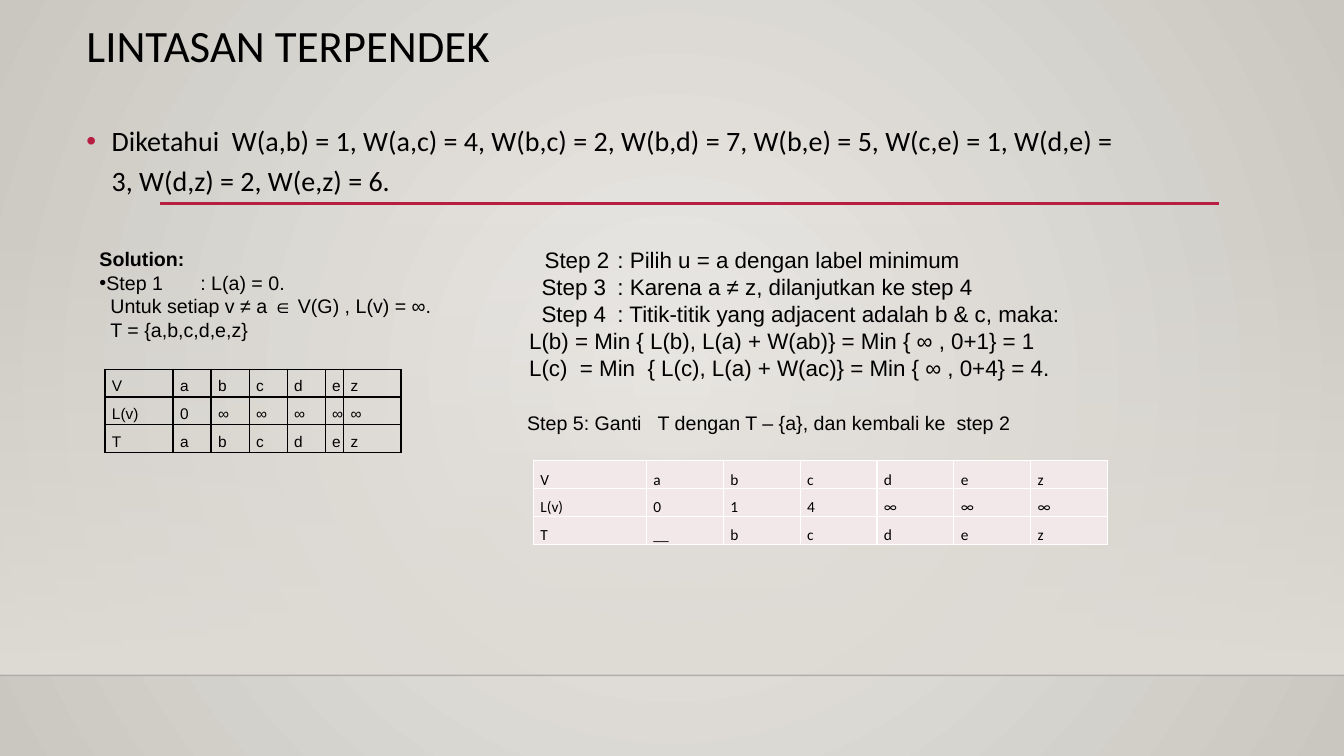
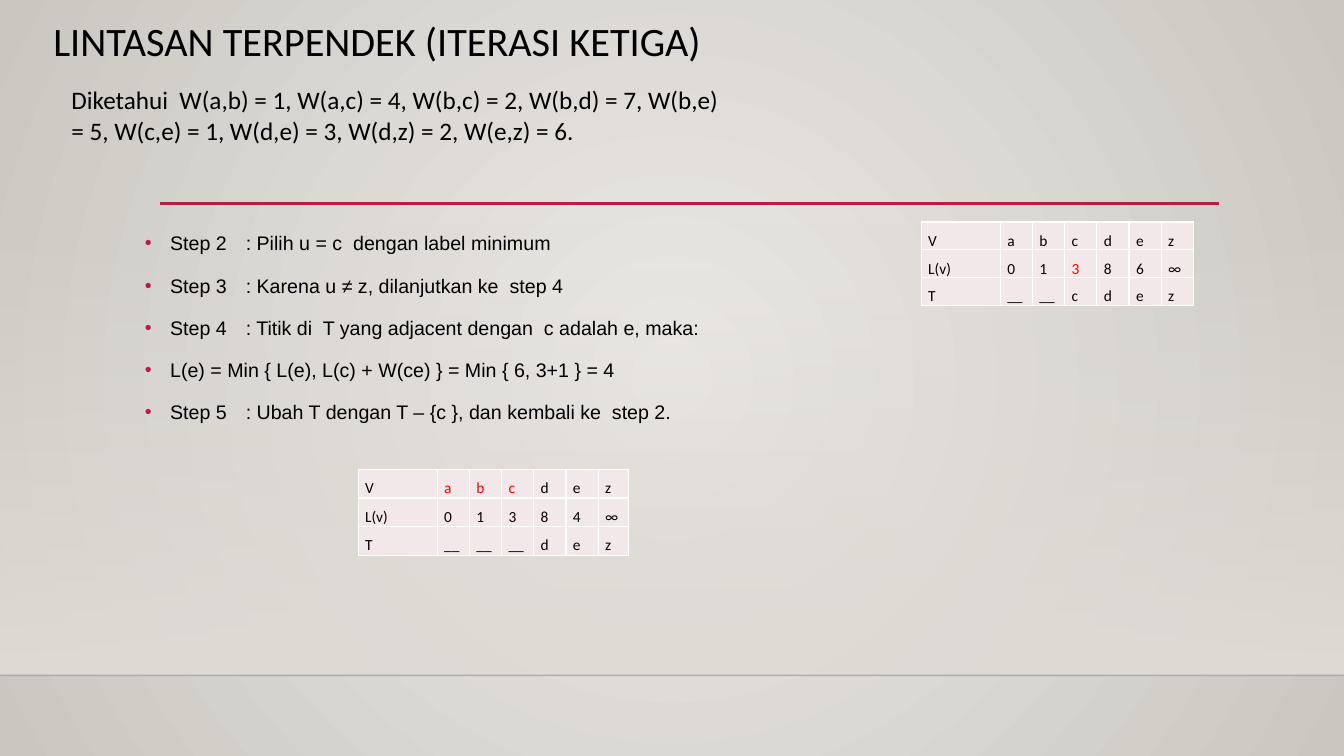
"""Build two slides on finding a shortest path step by step."""
from lxml.etree import SubElement
from pptx import Presentation
from pptx.dml.color import RGBColor
from pptx.enum.shapes import MSO_CONNECTOR as Connector, MSO_SHAPE as Shape
from pptx.enum.text import MSO_ANCHOR as Anchor
from pptx.oxml import parse_xml
from pptx.oxml.ns import nsdecls, qn
from pptx.util import Pt

BLACK = RGBColor(0x00, 0x00, 0x00)
WHITE = RGBColor(0xFF, 0xFF, 0xFF)
RED = RGBColor(0xFF, 0x00, 0x00)
ACCENT = RGBColor(0xB7, 0x1E, 0x42)
GLOW = RGBColor(0xEC, 0xEA, 0xE7)
EDGE = RGBColor(0xCA, 0xC7, 0xC1)
FLOOR = RGBColor(0xDF, 0xDB, 0xD5)
BLUSH = RGBColor(0xF3, 0xE8, 0xE9)
HEADING, BODY = "Calibri", "Arial"
WIDTH, HEIGHT = 960, 540
FLOOR_TOP, FLOOR_LINE = 159, 482.4
WEIGHTS = ("Diketahui  W(a,b) = 1, W(a,c) = 4, W(b,c) = 2, W(b,d) = 7, W(b,e) = 5, "
           "W(c,e) = 1, W(d,e) = 3, W(d,z) = 2, W(e,z) = 6.")


def add_text(page, frame, lines, size, font=BODY, spacing=1.0, before=0, anchor=Anchor.TOP):
    """Add a text box; each line holds text, margin, first-line indent and bullet colour."""
    box = page.shapes.add_textbox(*map(Pt, frame))
    text_frame = box.text_frame
    text_frame.word_wrap = True
    text_frame.vertical_anchor = anchor
    for index, (text, margin, indent, bullet) in enumerate(lines):
        para = text_frame.add_paragraph() if index else text_frame.paragraphs[0]
        properties = para._p.get_or_add_pPr()
        properties.set("marL", str(Pt(margin)))
        properties.set("indent", str(Pt(indent)))
        if bullet is not None:
            color = SubElement(properties, qn("a:buClr"))
            SubElement(color, qn("a:srgbClr"), val=str(bullet))
            SubElement(properties, qn("a:buFont"), typeface=BODY)
            SubElement(properties, qn("a:buChar"), char="•")
        para.line_spacing = spacing
        if index and before:
            para.space_before = Pt(before)
        span = para.add_run()
        span.text = text
        span.font.name = font
        span.font.size = Pt(size)
        span.font.color.rgb = BLACK
    return box


def add_label_table(page, left, top, widths, row_height, rows, font=HEADING,
                    border=WHITE, fill=BLUSH, red_cells=()):
    """Add a table of vertices, labels and remaining set, one string per row."""
    table = page.shapes.add_table(len(rows), len(widths), Pt(left), Pt(top), Pt(sum(widths)),
                                  Pt(row_height * len(rows))).table
    table.first_row = table.horz_banding = False
    for column, width in zip(table.columns, widths):
        column.width = Pt(width)
    for row, values in enumerate(rows):
        table.rows[row].height = Pt(row_height)
        for column, value in enumerate(values.split()):
            cell = table.cell(row, column)
            cell.margin_left = cell.margin_right = Pt(5)
            cell.margin_top = cell.margin_bottom = 0
            for side in ("lnL", "lnR", "lnT", "lnB"):
                line = SubElement(cell._tc.get_or_add_tcPr(), qn("a:" + side), w=str(Pt(1)))
                SubElement(SubElement(line, qn("a:solidFill")), qn("a:srgbClr"), val=str(border))
            if fill is None:
                cell.fill.background()
            else:
                cell.fill.solid()
                cell.fill.fore_color.rgb = fill
            para = cell.text_frame.paragraphs[0]
            para.line_spacing = 1.5
            span = para.add_run()
            span.text = value
            span.font.name = font
            span.font.size = Pt(11)
            span.font.color.rgb = RED if (row, column) in red_cells else BLACK


deck = Presentation()
deck.slide_width, deck.slide_height = Pt(WIDTH), Pt(HEIGHT)

pages = []
for title, size, frame in (
    ("LINTASAN TERPENDEK", 32, (54.7, 13.7, 756, 82.8)),
    ("LINTASAN TERPENDEK (ITERASI KETIGA)", 28.8, (31, 12.2, 756, 46.8)),
):
    page = deck.slides.add_slide(deck.slide_layouts[6])
    pages.append(page)

    backdrop = page.background.fill
    backdrop.gradient()
    for stop, color in zip(backdrop.gradient_stops, (GLOW, EDGE)):
        stop.color.rgb = color
    direction = next(page._element.iter(qn("a:lin")))
    direction.getparent().replace(direction, parse_xml(
        f'<a:path {nsdecls("a")} path="circle">'
        '<a:fillToRect l="50000" t="50000" r="50000" b="50000"/></a:path>'))

    floor = page.shapes.add_shape(Shape.RECTANGLE, 0, Pt(FLOOR_TOP), Pt(WIDTH),
                                  Pt(FLOOR_LINE - FLOOR_TOP))
    floor.shadow.inherit = False
    floor.line.fill.background()
    floor.fill.gradient()
    floor.fill.gradient_angle = 270
    for stop in floor.fill.gradient_stops:
        stop.color.rgb = FLOOR
    SubElement(next(floor._element.iter(qn("a:srgbClr"))), qn("a:alpha"), val="0")

    for start, end, height, color, weight, opacity in (
        (0, WIDTH, FLOOR_LINE, BLACK, 1, 20),
        (114.3, 871, 145.3, ACCENT, 2.5, 100),
    ):
        rule = page.shapes.add_connector(Connector.STRAIGHT, Pt(start), Pt(height),
                                         Pt(end), Pt(height))
        rule.line.color.rgb = color
        rule.line.width = Pt(weight)
        SubElement(next(rule._element.iter(qn("a:srgbClr"))), qn("a:alpha"),
                   val=str(opacity * 1000))
        SubElement(rule._element.spPr, qn("a:effectLst"))

    add_text(page, frame, [(title, 0, 0, None)], size, HEADING, 0.9)

first, third = pages

add_text(first, (54.7, 80, 756, 70), [(WEIGHTS, 18, -18, ACCENT)], 20, HEADING, 1.2)
solution = add_text(first, (64, 173, 391, 80), [
    ("Solution:", 0, 0, None),
    ("Step 1\t: L(a) = 0.", 0, 0, BLACK),
    ("Untuk setiap v ≠ a ∈ V(G) , L(v) = ∞.", 0, 7.8, None),
    ("T = {a,b,c,d,e,z}", 0, 7.8, None),
], 14)
solution.text_frame.paragraphs[0].runs[0].font.bold = True
add_label_table(first, 75, 263.7, [48.6] + [27.2] * 4 + [13.2, 41], 18.2,
                ["V a b c d e z", "L(v) 0 ∞ ∞ ∞ ∞ ∞", "T a b c d e z"],
                BODY, BLACK, None)
add_text(first, (362, 172.5, 407.5, 126), [
    ("Step 2\t: Pilih u = a dengan label minimum", 0, 20, None),
    ("Step 3\t: Karena a ≠ z, dilanjutkan ke step 4", 0, 17.8, None),
    ("Step 4\t: Titik-titik yang adjacent adalah b & c, maka:", 0, 17.8, None),
    ("L(b) = Min { L(b), L(a) + W(ab)} = Min { ∞ , 0+1} = 1", 0, 8.9, None),
    ("L(c)  = Min  { L(c), L(a) + W(ac)} = Min { ∞ , 0+4} = 4.", 0, 8.9, None),
], 16)
add_text(first, (369.4, 289.5, 500, 24.5),
         [("Step 5: Ganti   T dengan T – {a}, dan kembali ke  step 2", 0, 0, None)],
         14, anchor=Anchor.MIDDLE)
add_label_table(first, 381, 329.2, [80.8] + [54.9] * 6, 19.8,
                ["V a b c d e z", "L(v) 0 1 4 ∞ ∞ ∞", "T __ b c d e z"])

add_text(third, (43.9, 57, 480, 51), [(WEIGHTS, 0, 0, None)], 18, HEADING)
add_text(third, (96.5, 158.4, 756, 164), [(step, 18, -18, ACCENT) for step in (
    "Step 2\t: Pilih u = c  dengan label minimum",
    "Step 3\t: Karena u ≠ z, dilanjutkan ke  step 4",
    "Step 4\t: Titik di  T yang adjacent dengan  c adalah e, maka:",
    "L(e) = Min { L(e), L(c) + W(ce) } = Min { 6, 3+1 } = 4",
    "Step 5\t: Ubah T dengan T – {c }, dan kembali ke  step 2.",
)], 14, spacing=1.2, before=10)
add_label_table(third, 255.8, 335.4, [56.5] + [23] * 5 + [21.6], 20.4,
                ["V a b c d e z", "L(v) 0 1 3 8 4 ∞", "T __ __ __ d e z"],
                red_cells=[(0, 1), (0, 2), (0, 3)])
add_label_table(third, 658, 158.6, [56.5] + [23] * 6, 19.8,
                ["V a b c d e z", "L(v) 0 1 3 8 6 ∞", "T __ __ c d e z"],
                red_cells=[(1, 3)])

deck.save("out.pptx")
